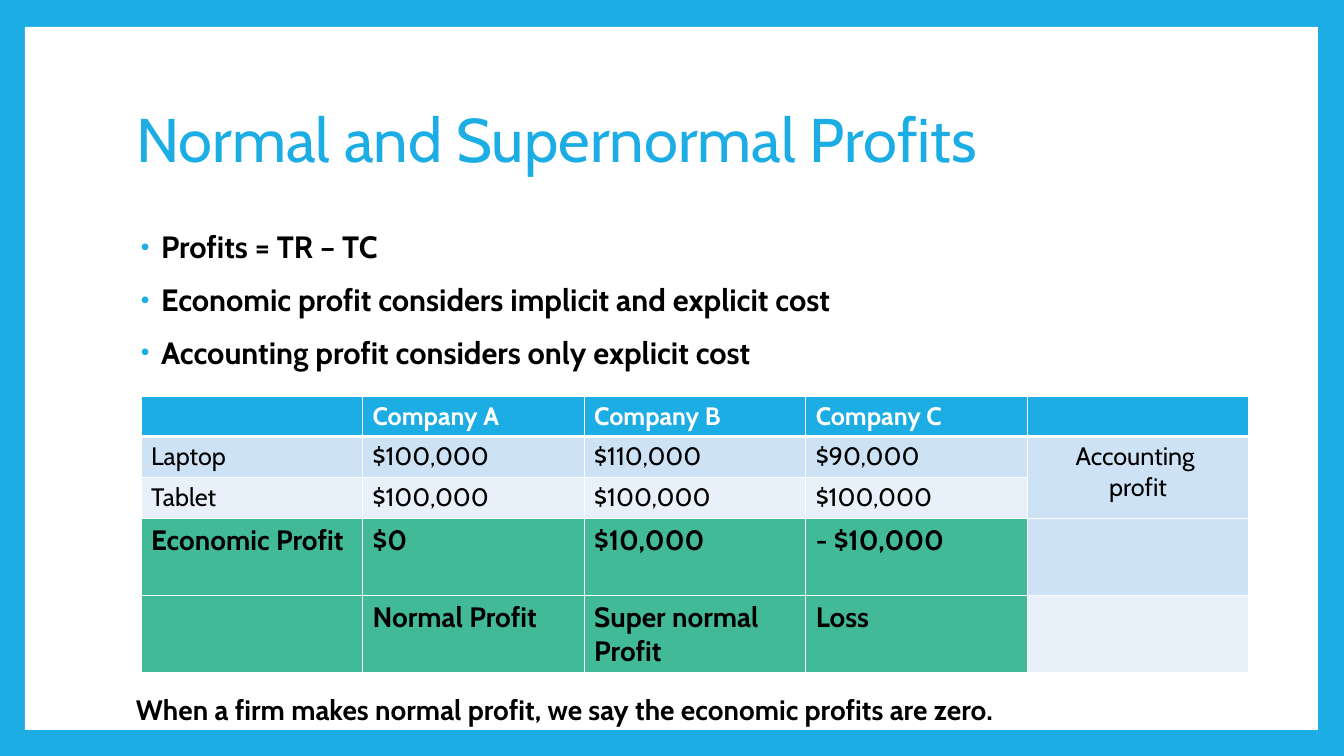
"""Build the slide on normal and supernormal profits."""
import pptx
import pptx.dml.color
import pptx.enum.shapes
import pptx.enum.text
import pptx.oxml
import pptx.util

PX = 914400 / 100.8
BLUE, WHITE, BLACK = "1CADE4", "FFFFFF", "000000"
PALE, PALER, GREEN = "CDE3F5", "E8F1FA", "42BA97"
NAMESPACE = 'xmlns:a="http://schemas.openxmlformats.org/drawingml/2006/main"'


def px(*lengths):
    return [pptx.util.Emu(round(length * PX)) for length in lengths]


def style(paragraph, size, color, bold=False):
    for run in paragraph.runs:
        run.font.name = "Cabin"
        run.font.size = pptx.util.Pt(size)
        run.font.bold = bold
        run.font.color.rgb = pptx.dml.color.RGBColor.from_string(color)


presentation = pptx.Presentation()
presentation.slide_width, presentation.slide_height = px(1344, 756)
slide = presentation.slides.add_slide(presentation.slide_layouts[5])
slide.background.fill.solid()
slide.background.fill.fore_color.rgb = pptx.dml.color.RGBColor.from_string(BLUE)

title = slide.shapes.title
title.left, title.top, title.width, title.height = px(126, 68, 1089, 149)
title.text_frame.text = "Normal and Supernormal Profits"
title.text_frame.vertical_anchor = pptx.enum.text.MSO_ANCHOR.MIDDLE
heading = title.text_frame.paragraphs[0]
heading.alignment = pptx.enum.text.PP_ALIGN.LEFT
heading.line_spacing = 0.9
style(heading, 44, BLUE)

panel = slide.shapes.add_shape(pptx.enum.shapes.MSO_SHAPE.RECTANGLE, *px(25, 27, 1293, 703))
panel.shadow.inherit = False
panel.fill.solid()
panel.fill.fore_color.rgb = pptx.dml.color.RGBColor.from_string(WHITE)
panel.line.fill.background()
title._element.addprevious(panel._element)

body = slide.shapes.add_textbox(*px(126, 227, 1089, 446))
body.text_frame.word_wrap = True
body.text_frame.text = "\n".join([
    "Profits = TR – TC",
    "Economic profit considers implicit and explicit cost",
    "Accounting profit considers only explicit cost",
])
for paragraph in body.text_frame.paragraphs:
    paragraph.line_spacing = 0.9
    paragraph.space_before = pptx.util.Pt(14)
    style(paragraph, 22, BLACK, True)
    properties = paragraph._p.get_or_add_pPr()
    properties.set("marL", str(pptx.util.Inches(0.25)))
    properties.set("indent", str(pptx.util.Inches(-0.2)))
    for bullet in (
        f'<a:buClr {NAMESPACE}><a:srgbClr val="{BLUE}"/></a:buClr>',
        f'<a:buSzPct {NAMESPACE} val="80000"/>',
        f'<a:buFont {NAMESPACE} typeface="Arial"/>',
        f'<a:buChar {NAMESPACE} char="•"/>',
    ):
        properties.append(pptx.oxml.parse_xml(bullet))

rows = [
    ["", "Company A", "Company B", "Company C", ""],
    ["Laptop", "$100,000", "$110,000", "$90,000", "Accounting \nprofit"],
    ["Tablet", "$100,000", "$100,000", "$100,000", ""],
    ["Economic Profit", "$0", "$10,000", "- $10,000", ""],
    ["", "Normal Profit", "Super normal Profit", "Loss", ""],
]
row_styles = [
    (40, 18, WHITE, True, BLUE, BLUE),
    (41, 18, BLACK, False, PALE, PALE),
    (41, 18, BLACK, False, PALER, PALER),
    (77, 20, BLACK, True, GREEN, PALE),
    (77, 20, BLACK, True, GREEN, PALER),
]
table = slide.shapes.add_table(5, 5, *px(141, 396, 1108, 276)).table
table.cell(1, 4).merge(table.cell(2, 4))
for row, (texts, row_style) in enumerate(zip(rows, row_styles)):
    height, size, color, bold, fill, last_fill = row_style
    table.rows[row].height = px(height)[0]
    for column, text in enumerate(texts):
        cell = table.cell(row, column)
        cell.text_frame.text = text
        for paragraph in cell.text_frame.paragraphs:
            style(paragraph, size, color, bold)
            if column == 4:
                paragraph.alignment = pptx.enum.text.PP_ALIGN.CENTER
        properties = cell._tc.get_or_add_tcPr()
        for side in ("lnL", "lnR", "lnT", "lnB"):
            heavy = (row, side) in ((0, "lnB"), (1, "lnT"))
            properties.append(pptx.oxml.parse_xml(
                f'<a:{side} {NAMESPACE} w="{pptx.util.Pt(3 if heavy else 1)}"><a:solidFill>'
                f'<a:srgbClr val="{WHITE}"/></a:solidFill></a:{side}>'))
        cell.fill.solid()
        cell.fill.fore_color.rgb = pptx.dml.color.RGBColor.from_string(
            last_fill if column == 4 else fill)

note = slide.shapes.add_textbox(*px(126, 688, 915, 44))
note.text_frame.word_wrap = True
note.text_frame.text = "When a firm makes normal profit, we say the economic profits are zero."
style(note.text_frame.paragraphs[0], 20, BLACK, True)

presentation.save("out.pptx")
